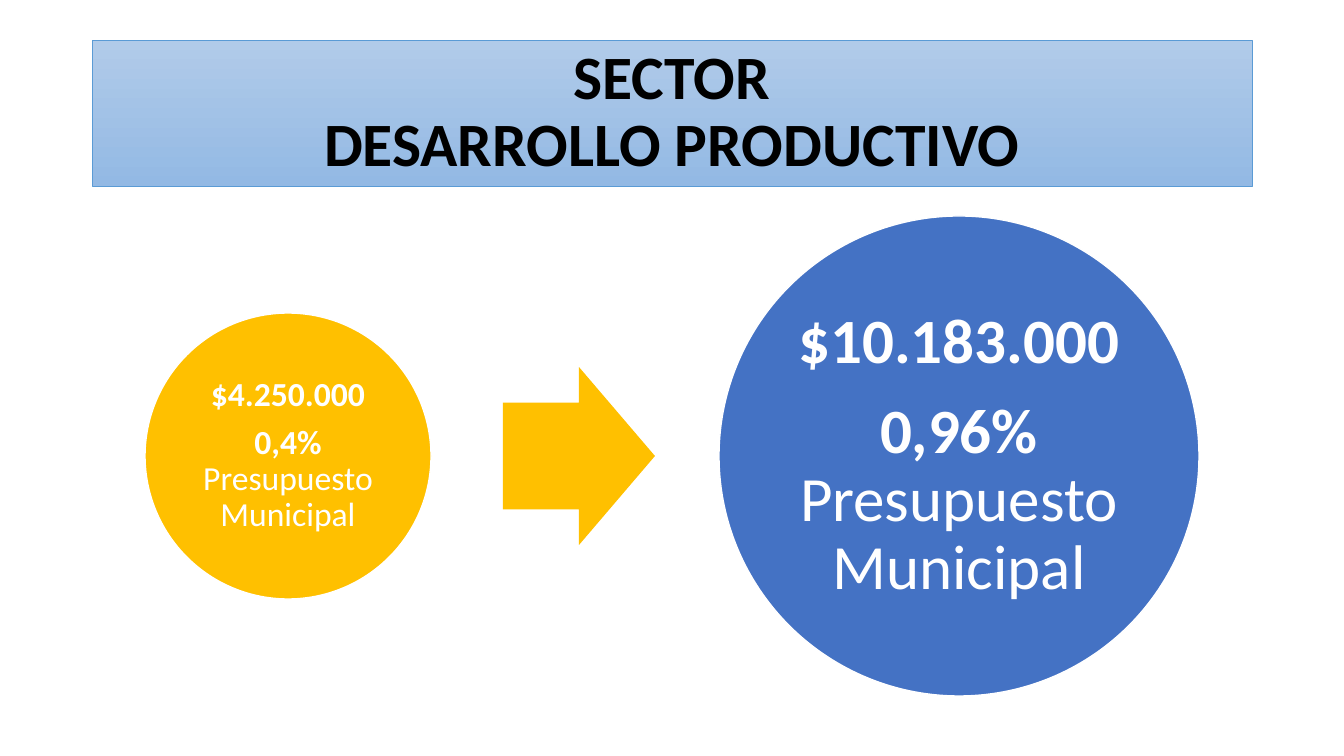
from pptx import Presentation
from pptx.dml.color import RGBColor
from pptx.enum.shapes import MSO_SHAPE
from pptx.enum.text import MSO_ANCHOR, MSO_AUTO_SIZE, PP_ALIGN
from pptx.util import Pt

EMU_PER_PX = 914400 / 100.8
FONT = "Calibri"
COLORS = {
    "black": "000000",
    "white": "FFFFFF",
    "gold": "FFC000",
    "blue": "4472C4",
    "banner_top": "B1CBE9",
    "banner_bottom": "93B9E4",
    "banner_line": "5B9BD5",
}


def px(length):
    return round(length * EMU_PER_PX)


def color(name):
    return RGBColor.from_string(COLORS[name])


def place(shape, box):
    shape.left, shape.top, shape.width, shape.height = map(px, box)


def format_span(span, size, color_name, bold):
    span.font.name = FONT
    span.font.size = Pt(size)
    span.font.bold = bold
    span.font.color.rgb = color(color_name)


def add_solid(page, kind, box, fill):
    shape = page.shapes.add_shape(kind, *map(px, box))
    shape.shadow.inherit = False
    shape.fill.solid()
    shape.fill.fore_color.rgb = color(fill)
    shape.line.fill.background()
    return shape


def build_title(page, box, text):
    title = page.shapes.title
    place(title, box)
    title.fill.gradient()
    title.fill.gradient_angle = 270
    for stop, name, position in zip(title.fill.gradient_stops, ("banner_top", "banner_bottom"), (0, 1)):
        stop.color.rgb = color(name)
        stop.position = position
    title.line.color.rgb = color("banner_line")
    title.line.width = Pt(0.5)
    frame = title.text_frame
    frame.text = text
    frame.auto_size = MSO_AUTO_SIZE.NONE
    frame.vertical_anchor = MSO_ANCHOR.MIDDLE
    para = frame.paragraphs[0]
    para.alignment = PP_ALIGN.CENTER
    para.line_spacing = 0.9
    for span in para.runs:
        format_span(span, 44, "black", True)


def build_budget_circle(page, box, fill, size, inset, amount, share):
    circle = add_solid(page, MSO_SHAPE.OVAL, box, fill)
    circle.line.color.rgb = color("white")
    circle.line.width = Pt(1)
    frame = circle.text_frame
    frame.word_wrap = True
    frame.vertical_anchor = MSO_ANCHOR.MIDDLE
    frame.margin_left = frame.margin_right = px(inset)
    frame.margin_top = frame.margin_bottom = px(inset)
    frame.text = f"{amount}\n{share}"
    label = frame.paragraphs[1].add_run()
    label.text = " Presupuesto Municipal"
    for para in frame.paragraphs:
        para.alignment = PP_ALIGN.CENTER
        para.line_spacing = 0.9
        para.space_after = Pt(round(size * 0.35))
        for position, span in enumerate(para.runs):
            format_span(span, size, "white", position == 0)


def build_comparison(page, box):
    left, top, width, height = box
    middle = top + height // 2
    small, arrow_width, arrow_height = 286, 152, 178
    build_budget_circle(page, (left, middle - small // 2, small, small),
                        "gold", 24, 3, "$4.250.000", "0,4%")
    arrow = add_solid(page, MSO_SHAPE.RIGHT_ARROW,
                      (left + 358, middle - arrow_height // 2, arrow_width, arrow_height), "gold")
    arrow.adjustments[0] = 0.6
    arrow.adjustments[1] = 0.5
    build_budget_circle(page, (left + width - height, top, height, height),
                        "blue", 45, 6, "$10.183.000", "0,96%")


def main():
    deck = Presentation()
    deck.slide_width, deck.slide_height = px(1344), px(756)
    page = deck.slides.add_slide(deck.slide_layouts[5])
    build_title(page, (92, 40, 1160, 146), "SECTOR\vDESARROLLO PRODUCTIVO")
    build_comparison(page, (145, 216, 1054, 480))
    deck.save("out.pptx")


if __name__ == "__main__":
    main()
